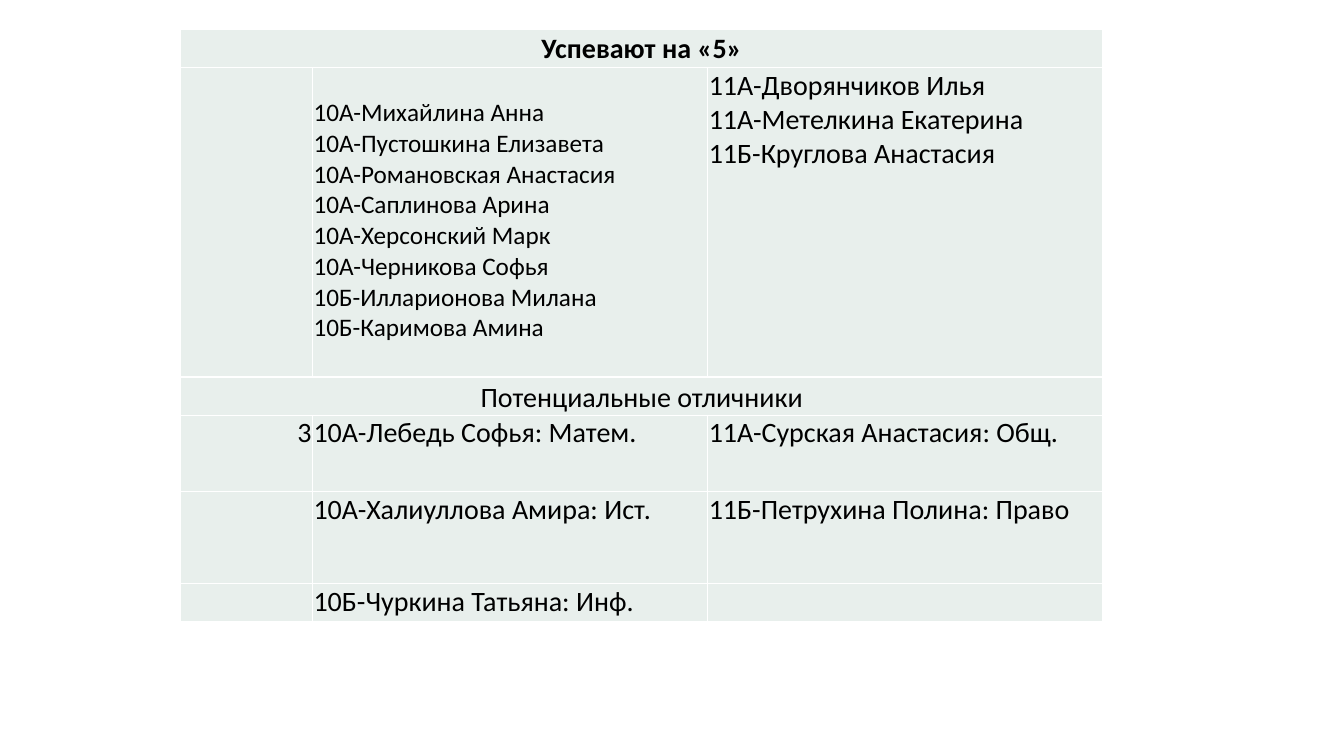
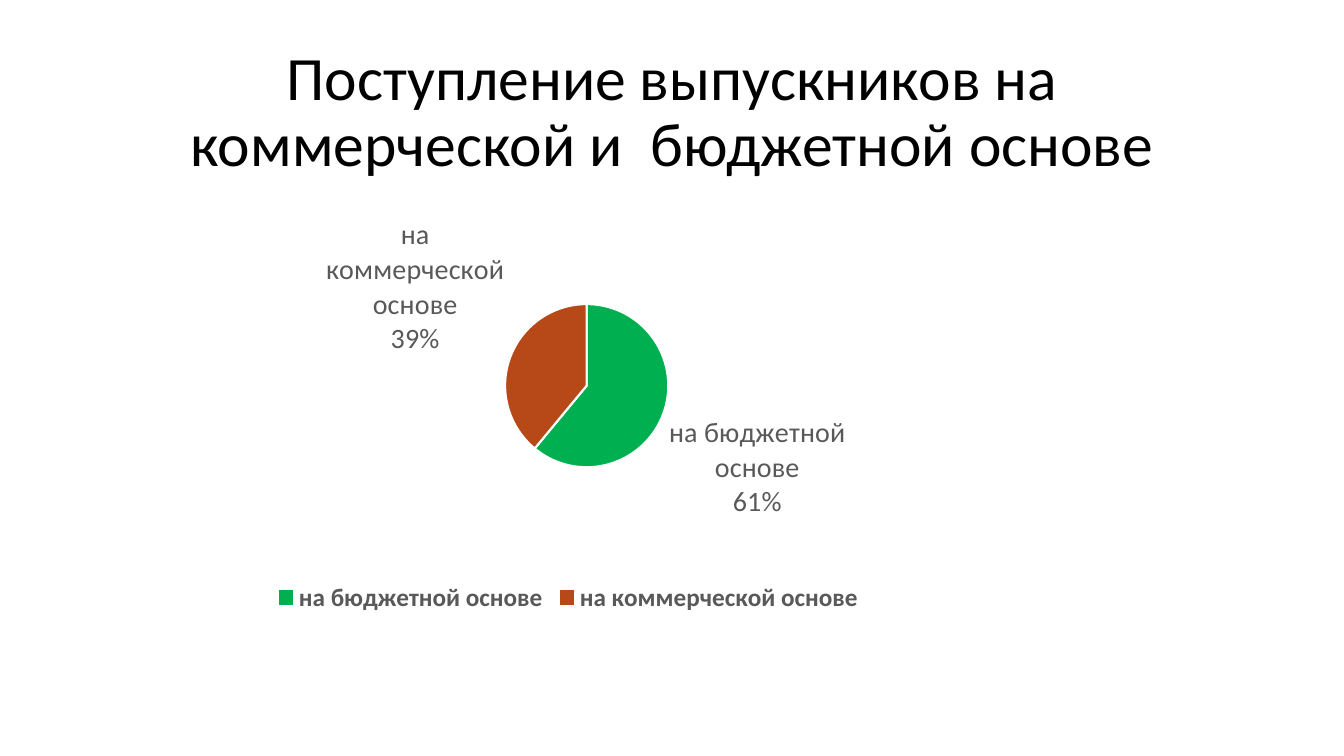
"""Build two school slides: a table of top pupils and a chart of admissions."""
from dataclasses import dataclass

from lxml.etree import SubElement
from pptx import Presentation
from pptx.chart.data import CategoryChartData
from pptx.dml.color import RGBColor
from pptx.enum.chart import XL_CHART_TYPE, XL_LABEL_POSITION, XL_LEGEND_POSITION
from pptx.enum.text import MSO_ANCHOR, PP_ALIGN
from pptx.oxml import parse_xml
from pptx.oxml.ns import nsdecls, qn
from pptx.slide import Slide
from pptx.table import _Cell
from pptx.text.text import Font, TextFrame
from pptx.util import Inches, Pt


@dataclass(frozen=True)
class Theme:
    font: str = "Calibri"
    black: str = "000000"
    white: str = "FFFFFF"
    gray: str = "595959"
    cell: str = "E8EFEC"
    green: str = "00B050"
    rust: str = "B74919"
    title: int = 44
    body: int = 20
    small: int = 18


@dataclass(frozen=True)
class Entry:
    row: int
    col: int
    text: str
    size: int = 20
    bold: bool = False
    align: PP_ALIGN = PP_ALIGN.LEFT
    anchor: MSO_ANCHOR = MSO_ANCHOR.TOP
    bottom: float = 0


@dataclass(frozen=True)
class Slice:
    name: str
    percent: int
    color: str


T = Theme()
COLS = (1.31, 3.92, 3.92)
ROWS = (0.38, 3.07, 0.38, 0.76, 0.91, 0.38)
TITLE_ROWS = (0, 2)
TOP_10 = """10А-Михайлина Анна
10А-Пустошкина Елизавета
10А-Романовская Анастасия
10А-Саплинова Арина
10А-Херсонский Марк
10А-Черникова Софья
10Б-Илларионова Милана
10Б-Каримова Амина"""
TOP_11 = """11А-Дворянчиков Илья
11А-Метелкина Екатерина
11Б-Круглова Анастасия"""
ENTRIES = (
    Entry(0, 0, "Успевают на «5»", T.body, True, PP_ALIGN.CENTER, MSO_ANCHOR.MIDDLE),
    Entry(1, 1, TOP_10, T.small, anchor=MSO_ANCHOR.BOTTOM, bottom=0.33),
    Entry(1, 2, TOP_11),
    Entry(2, 0, "Потенциальные отличники", align=PP_ALIGN.CENTER, anchor=MSO_ANCHOR.BOTTOM),
    Entry(3, 0, "3", align=PP_ALIGN.RIGHT),
    Entry(3, 1, "10А-Лебедь Софья: Матем."),
    Entry(3, 2, "11А-Сурская Анастасия: Общ."),
    Entry(4, 1, "10А-Халиуллова Амира: Ист."),
    Entry(4, 2, "11Б-Петрухина Полина: Право"),
    Entry(5, 1, "10Б-Чуркина Татьяна: Инф."),
)
SLICES = (
    Slice("на бюджетной основе", 61, T.green),
    Slice("на коммерческой основе", 39, T.rust),
)


def style_font(font: Font, size: int, color: str = T.black, bold: bool = False) -> None:
    """Apply the theme typeface with a size, colour and weight."""
    font.name, font.size, font.bold = T.font, Pt(size), bold
    font.color.rgb = RGBColor.from_string(color)


def write(tf: TextFrame, text: str, *, size: int, color: str = T.black, bold: bool = False,
          align: PP_ALIGN = PP_ALIGN.LEFT, spacing: float = 1.0) -> None:
    """Write one formatted paragraph for each line of text."""
    for i, line in enumerate(text.split("\n")):
        p = tf.add_paragraph() if i else tf.paragraphs[0]
        p.alignment, p.line_spacing = align, spacing
        r = p.add_run()
        r.text = line
        style_font(r.font, size, color, bold)


def style_cell(cell: _Cell) -> None:
    """Give a cell thin margins, white borders and the pale fill."""
    cell.margin_left = cell.margin_right = cell.margin_top = Inches(0.01)
    cell.margin_bottom = 0
    tc_pr = cell._tc.get_or_add_tcPr()
    for side in ("lnL", "lnR", "lnT", "lnB"):
        ln = SubElement(tc_pr, qn(f"a:{side}"), w=str(Pt(1)))
        fill = SubElement(ln, qn("a:solidFill"))
        SubElement(fill, qn("a:srgbClr"), val=T.white)
    cell.fill.solid()
    cell.fill.fore_color.rgb = RGBColor.from_string(T.cell)


def add_pupils(s: Slide) -> None:
    """Add the table of excellent and nearly excellent pupils."""
    table = s.shapes.add_table(len(ROWS), len(COLS), Inches(1.79), Inches(0.29),
                               Inches(sum(COLS)), Inches(sum(ROWS))).table
    table.first_row = table.horz_banding = False
    for col, width in zip(table.columns, COLS):
        col.width = Inches(width)
    for row, height in zip(table.rows, ROWS):
        row.height = Inches(height)
    for cell in table.iter_cells():
        style_cell(cell)
    for row in TITLE_ROWS:
        table.cell(row, 0).merge(table.cell(row, len(COLS) - 1))
    for e in ENTRIES:
        cell = table.cell(e.row, e.col)
        cell.vertical_anchor, cell.margin_bottom = e.anchor, Inches(e.bottom)
        write(cell.text_frame, e.text, size=e.size, bold=e.bold, align=e.align)


def add_title(s: Slide, text: str) -> None:
    """Add a centred slide title."""
    tf = s.shapes.add_textbox(Inches(0.92), Inches(0.4), Inches(11.5), Inches(1.45)).text_frame
    tf.word_wrap, tf.vertical_anchor = True, MSO_ANCHOR.MIDDLE
    write(tf, text, size=T.title, align=PP_ALIGN.CENTER, spacing=0.9)


def add_admissions(s: Slide) -> None:
    """Add the pie chart of funded and paid admissions."""
    data = CategoryChartData()
    data.categories = [x.name for x in SLICES]
    data.add_series("Series 1", [x.percent for x in SLICES])
    chart = s.shapes.add_chart(XL_CHART_TYPE.PIE, Inches(1.03), Inches(1.98),
                               Inches(9.21), Inches(4.15), data).chart
    chart.has_title, chart.has_legend = False, True
    chart.legend.position = XL_LEGEND_POSITION.BOTTOM
    chart.legend.include_in_layout = False
    style_font(chart.legend.font, T.small, T.gray, True)

    plot = chart.plots[0]
    plot.vary_by_categories = True
    for i, x in enumerate(SLICES):
        fmt = plot.series[0].points[i].format
        fmt.fill.solid()
        fmt.fill.fore_color.rgb = RGBColor.from_string(x.color)
        fmt.line.width = Pt(1.5)
        fmt.line.color.rgb = RGBColor.from_string(T.white)

    labels = plot.series[0].data_labels
    labels.show_percentage = labels.show_category_name = True
    labels.show_value = False
    labels.position = XL_LABEL_POSITION.OUTSIDE_END
    style_font(labels.font, T.body, T.gray)

    area = chart._chartSpace.chart.plotArea
    for old in area.findall(qn("c:layout")):
        area.remove(old)
    box = {"x": 0.43, "y": 0.25, "w": 0.18, "h": 0.39}
    parts = "".join(f'<c:{k} val="{v}"/>' for k, v in box.items())
    area.insert(0, parse_xml(
        f'<c:layout {nsdecls("c")}><c:manualLayout><c:layoutTarget val="inner"/>'
        f'<c:xMode val="edge"/><c:yMode val="edge"/>{parts}</c:manualLayout></c:layout>'))


def main() -> None:
    """Build and save the presentation."""
    prs = Presentation()
    prs.slide_width, prs.slide_height = Inches(13.33), Inches(7.5)
    blank = prs.slide_layouts[6]
    add_pupils(prs.slides.add_slide(blank))
    s = prs.slides.add_slide(blank)
    add_title(s, "Поступление выпускников на коммерческой и  бюджетной основе")
    add_admissions(s)
    prs.save("out.pptx")


if __name__ == "__main__":
    main()
